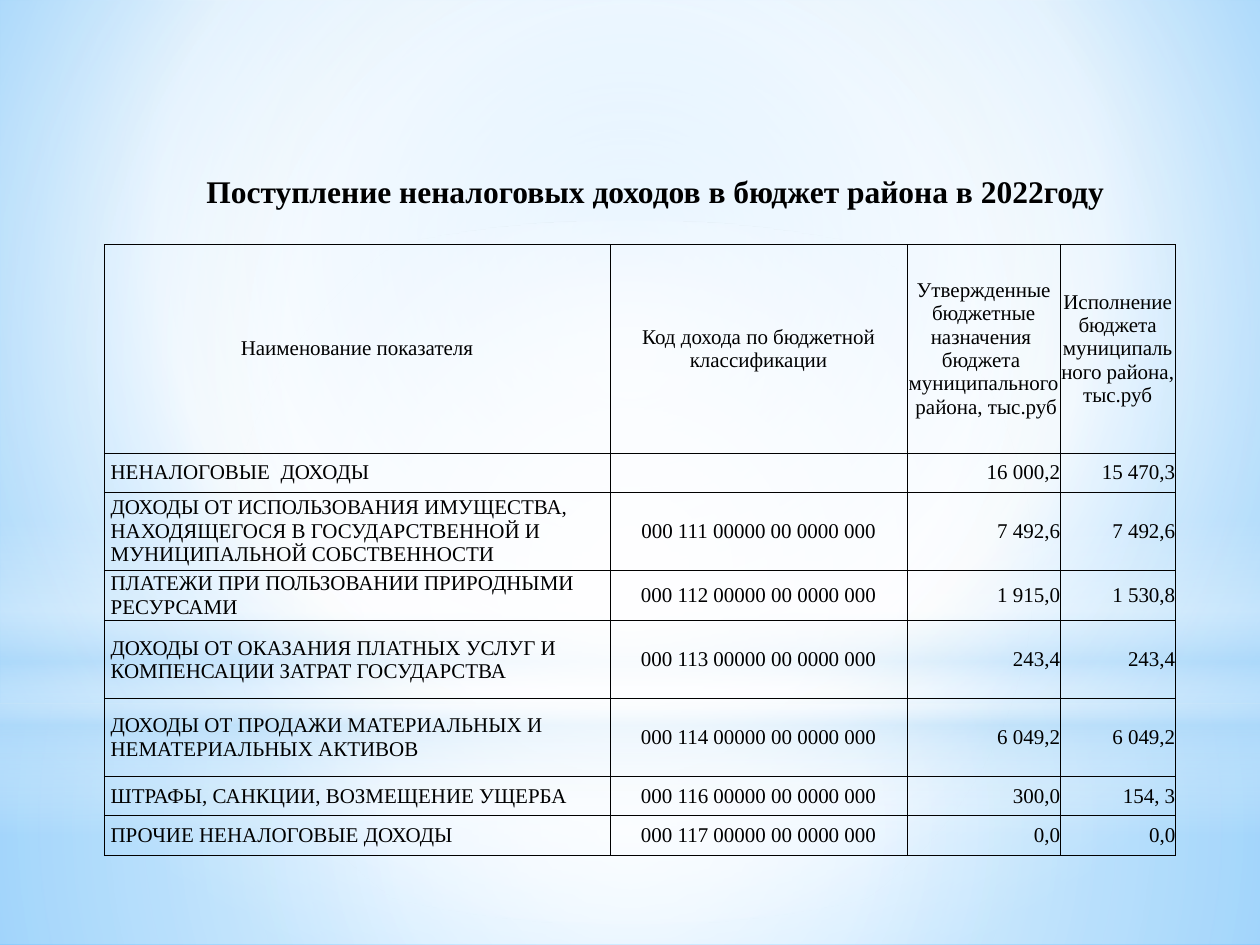
from pptx import Presentation
from pptx.dml.color import RGBColor
from pptx.enum.shapes import MSO_SHAPE
from pptx.enum.text import MSO_ANCHOR, MSO_AUTO_SIZE, PP_ALIGN
from pptx.oxml import parse_xml
from pptx.oxml.ns import nsdecls, qn
from pptx.util import Pt

RECT, ELLIPSE = MSO_SHAPE.RECTANGLE, MSO_SHAPE.OVAL
LEFT, CENTER, RIGHT = PP_ALIGN.LEFT, PP_ALIGN.CENTER, PP_ALIGN.RIGHT
MIDDLE = MSO_ANCHOR.MIDDLE
GROW = MSO_AUTO_SIZE.SHAPE_TO_FIT_TEXT
TITLE_ONLY = 5
FONT = "Times New Roman"
BLACK, WHITE, PALE = "000000", "FFFFFF", "B4DCFA"
CENTERED = (50, 50, 50, 50)

HEADERS = [
    "Наименование показателя",
    "Код дохода по бюджетной классификации",
    "Утвержденные бюджетные назначения  бюджета  муниципального  района, тыс.руб",
    "Исполнение бюджета муниципального района, тыс.руб",
]
INCOME = [
    ("НЕНАЛОГОВЫЕ  ДОХОДЫ", "", "16 000,2", "15 470,3"),
    ("ДОХОДЫ ОТ ИСПОЛЬЗОВАНИЯ ИМУЩЕСТВА, НАХОДЯЩЕГОСЯ В ГОСУДАРСТВЕННОЙ И "
     "МУНИЦИПАЛЬНОЙ СОБСТВЕННОСТИ", "111", "7 492,6", "7 492,6"),
    ("ПЛАТЕЖИ ПРИ ПОЛЬЗОВАНИИ ПРИРОДНЫМИ РЕСУРСАМИ", "112", "1 915,0", "1 530,8"),
    ("ДОХОДЫ ОТ ОКАЗАНИЯ ПЛАТНЫХ УСЛУГ И КОМПЕНСАЦИИ ЗАТРАТ ГОСУДАРСТВА",
     "113", "243,4", "243,4"),
    ("ДОХОДЫ ОТ ПРОДАЖИ МАТЕРИАЛЬНЫХ И НЕМАТЕРИАЛЬНЫХ АКТИВОВ",
     "114", "6 049,2", "6 049,2"),
    ("ШТРАФЫ, САНКЦИИ, ВОЗМЕЩЕНИЕ УЩЕРБА", "116", "300,0", "154, 3"),
    ("ПРОЧИЕ НЕНАЛОГОВЫЕ ДОХОДЫ", "117", "0,0", "0,0"),
]
COLUMN_WIDTHS = [289, 169.8, 87.4, 65.8]
ROW_HEIGHTS = [119, 22.5, 44.5, 29, 44.5, 44.5, 22.5, 22.5]


def color(hex_code):
    return RGBColor.from_string(hex_code)


def style_font(font, size, bold):
    font.name, font.size, font.bold = FONT, Pt(size), bold
    font.color.rgb = color(BLACK)


def set_gradient(parent, stops, focus=None):
    stop_xml = "".join(
        f'<a:gs pos="{pos * 1000}"><a:srgbClr val="{hex_code}">'
        f'<a:alpha val="{opacity * 1000}"/></a:srgbClr></a:gs>'
        for pos, hex_code, opacity in stops)
    if focus:
        left, top, right, bottom = (side * 1000 for side in focus)
        direction = (f'<a:path path="circle"><a:fillToRect l="{left}" t="{top}" '
                     f'r="{right}" b="{bottom}"/></a:path>')
    else:
        direction = '<a:lin ang="5400000" scaled="0"/>'
    gradient = parse_xml(f'<a:gradFill {nsdecls("a")} rotWithShape="1">'
                         f'<a:gsLst>{stop_xml}</a:gsLst>{direction}</a:gradFill>')
    parent.replace(parent.find(qn("a:solidFill")), gradient)


def add_glow(slide, preset, top, height, stops, focus=None):
    glow = slide.shapes.add_shape(preset, 0, Pt(top), Pt(720), Pt(height))
    glow.shadow.inherit = False
    glow.line.fill.background()
    glow.fill.solid()
    set_gradient(glow.element.spPr, stops, focus)


def add_backdrop(slide):
    slide.background.fill.solid()
    set_gradient(slide.element.find(".//" + qn("p:bgPr")),
                 [(0, "9ED5FF", 100), (60, WHITE, 100), (100, "5BB9FF", 100)],
                 (20, 10, 20, 60))
    add_glow(slide, RECT, 402, 138,
             [(0, WHITE, 91), (37, WHITE, 76), (100, PALE, 79)], CENTERED)
    add_glow(slide, RECT, 0, 402,
             [(0, WHITE, 89), (48, WHITE, 62), (100, PALE, 79)], CENTERED)
    add_glow(slide, RECT, 297, 180,
             [(0, WHITE, 0), (29, WHITE, 30), (45, PALE, 40),
              (55, WHITE, 26), (65, PALE, 60), (100, WHITE, 0)])
    add_glow(slide, ELLIPSE, 126, 402, [(0, WHITE, 100), (56, WHITE, 0)], CENTERED)


def place_title(slide, left, top, width, height):
    title = slide.shapes.title
    title.left, title.top, title.width, title.height = map(Pt, (left, top, width, height))
    frame = title.text_frame
    frame.text = "Поступление неналоговых доходов в бюджет района в 2022году"
    frame.word_wrap, frame.auto_size, frame.vertical_anchor = True, GROW, MIDDLE
    heading = frame.paragraphs[0]
    heading.alignment = CENTER
    style_font(heading.font, 18, True)
    title.element.getparent().append(title.element)


def add_borders(cell):
    properties = cell._tc.get_or_add_tcPr()
    for index, side in enumerate(("lnL", "lnR", "lnT", "lnB")):
        properties.insert(index, parse_xml(
            f'<a:{side} {nsdecls("a")} w="{Pt(0.5)}"><a:solidFill>'
            f'<a:srgbClr val="{BLACK}"/></a:solidFill></a:{side}>'))


def fill_cell(cell, text, alignment, indent):
    cell.text = text
    cell.margin_left = Pt(indent)
    cell.margin_right = cell.margin_top = cell.margin_bottom = 0
    cell.vertical_anchor = MIDDLE
    cell.fill.background()
    add_borders(cell)
    paragraph = cell.text_frame.paragraphs[0]
    paragraph.alignment = alignment
    style_font(paragraph.font, 12, False)


def add_income_table(slide, left, top):
    table = slide.shapes.add_table(
        len(ROW_HEIGHTS), len(COLUMN_WIDTHS), Pt(left), Pt(top),
        Pt(sum(COLUMN_WIDTHS)), Pt(sum(ROW_HEIGHTS))).table
    table.first_row = table.horz_banding = False
    for column, width in zip(table.columns, COLUMN_WIDTHS):
        column.width = Pt(width)
    for row, height in zip(table.rows, ROW_HEIGHTS):
        row.height = Pt(height)
    for column, header in enumerate(HEADERS):
        fill_cell(table.cell(0, column), header, CENTER, 0)
    for row, (name, group, approved, executed) in enumerate(INCOME, 1):
        code = f"000 {group} 00000 00 0000 000" if group else ""
        fill_cell(table.cell(row, 0), name, LEFT, 3.6)
        fill_cell(table.cell(row, 1), code, CENTER, 0)
        fill_cell(table.cell(row, 2), approved, RIGHT, 0)
        fill_cell(table.cell(row, 3), executed, RIGHT, 0)


def main():
    deck = Presentation()
    deck.slide_width, deck.slide_height = Pt(720), Pt(540)
    slide = deck.slides.add_slide(deck.slide_layouts[TITLE_ONLY])
    add_backdrop(slide)
    add_income_table(slide, 59.6, 139.8)
    place_title(slide, 65.5, 94.5, 618, 29)
    deck.save("out.pptx")


if __name__ == "__main__":
    main()
